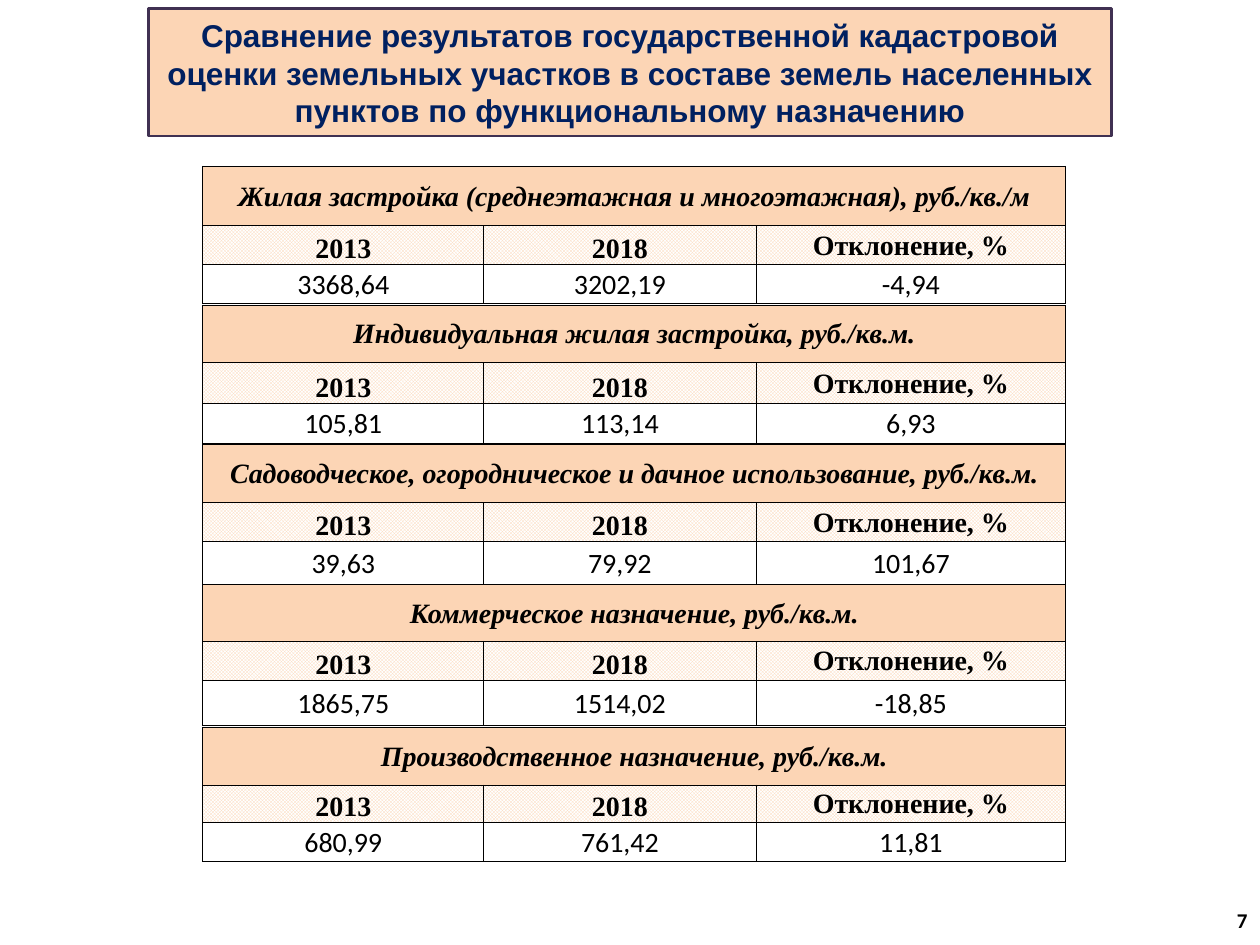
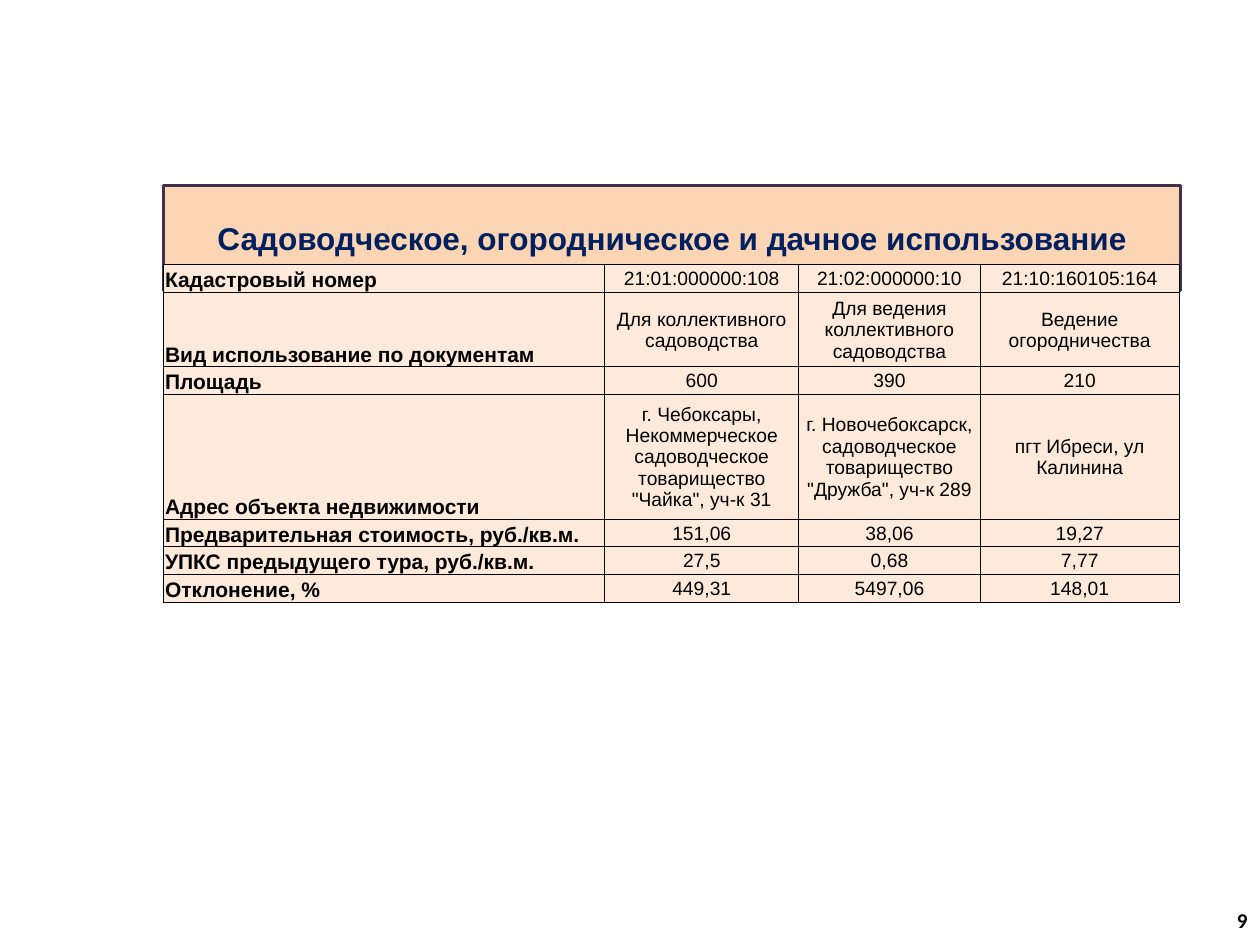
from lxml import etree
from pptx import Presentation
from pptx.dml.color import RGBColor
from pptx.enum.dml import MSO_PATTERN
from pptx.enum.text import MSO_ANCHOR, MSO_AUTO_SIZE, PP_ALIGN
from pptx.oxml.ns import qn
from pptx.util import Inches, Pt

LEFT, CENTER, RIGHT = PP_ALIGN.LEFT, PP_ALIGN.CENTER, PP_ALIGN.RIGHT
MIDDLE, BOTTOM = MSO_ANCHOR.MIDDLE, MSO_ANCHOR.BOTTOM
CHECK = MSO_PATTERN.SMALL_CHECKER_BOARD
GROW = MSO_AUTO_SIZE.SHAPE_TO_FIT_TEXT
TITLE_ONLY = 5

COLORS = {
    "peach": "FCD5B5",
    "cream": "FDEADA",
    "white": "FFFFFF",
    "black": "000000",
    "navy": "002060",
    "plum": "403152",
}

FONTS = {
    "title": {"name": "Arial", "size": Pt(18), "bold": True},
    "number": {"name": "Calibri", "size": Pt(12), "bold": True},
    "group": {"name": "Times New Roman", "size": Pt(16), "bold": True, "italic": True},
    "head": {"name": "Times New Roman", "size": Pt(16), "bold": True, "italic": False},
    "value": {"name": "Calibri", "size": Pt(16), "bold": False},
    "label": {"name": "Arial", "size": Pt(12), "bold": True},
    "detail": {"name": "Arial", "size": Pt(11), "bold": False},
}

INSETS = {
    "margin_left": Inches(0.01),
    "margin_right": Inches(0.01),
    "margin_top": Inches(0.01),
    "margin_bottom": 0,
}

HEADS = ["2013", "2018", "Отклонение, %"]
GROUP_COLS = [2.23, 2.16, 2.46]
GROUPS = [
    (1.32, [0.47, 0.31, 0.31],
     "Жилая застройка (среднеэтажная и многоэтажная), руб./кв./м",
     ["3368,64", "3202,19", "-4,94"]),
    (2.42, [0.46, 0.32, 0.32],
     "Индивидуальная жилая застройка, руб./кв.м.",
     ["105,81", "113,14", "6,93"]),
    (3.53, [0.46, 0.31, 0.34],
     "Садоводческое, огородническое и дачное использование, руб./кв.м.",
     ["39,63", "79,92", "101,67"]),
    (4.64, [0.45, 0.31, 0.36],
     "Коммерческое назначение, руб./кв.м.",
     ["1865,75", "1514,02", "-18,85"]),
    (5.77, [0.46, 0.3, 0.31],
     "Производственное назначение, руб./кв.м.",
     ["680,99", "761,42", "11,81"]),
]

PLOT_COLS = [3.5, 1.54, 1.44, 1.58]
PLOTS = [
    (0.22, ["Кадастровый номер",
            "21:01:000000:108", "21:02:000000:10", "21:10:160105:164"]),
    (0.59, ["Вид использование по документам",
            "Для коллективного садоводства",
            "Для ведения коллективного садоводства",
            "Ведение огородничества"]),
    (0.22, ["Площадь", "600", "390", "210"]),
    (0.99, ["Адрес объекта недвижимости",
            'г. Чебоксары, Некоммерческое садоводческое товарищество "Чайка", уч-к 31',
            'г. Новочебоксарск, садоводческое товарищество "Дружба", уч-к 289',
            "пгт Ибреси, ул Калинина"]),
    (0.22, ["Предварительная стоимость, руб./кв.м.", "151,06", "38,06", "19,27"]),
    (0.22, ["УПКС предыдущего тура, руб./кв.м.", "27,5", "0,68", "7,77"]),
    (0.22, ["Отклонение, %", "449,31", "5497,06", "148,01"]),
]


def color(name):
    return RGBColor.from_string(COLORS[name])


def assign(target, values):
    for key, value in values.items():
        setattr(target, key, value)


def write(frame, text, style, align, tint="black"):
    frame.text = text
    para = frame.paragraphs[0]
    para.alignment = align
    font = para.runs[0].font
    assign(font, FONTS[style])
    font.color.rgb = color(tint)


def add_slide(deck, text, box, number):
    slide = deck.slides.add_slide(deck.slide_layouts[TITLE_ONLY])
    title = slide.shapes.title
    assign(title, dict(zip(("left", "top", "width", "height"), map(Inches, box))))
    title.fill.solid()
    title.fill.fore_color.rgb = color("peach")
    title.line.color.rgb = color("plum")
    title.line.width = Pt(1.5)
    frame = title.text_frame
    write(frame, text, "title", CENTER, "navy")
    assign(frame, {"word_wrap": True, "auto_size": GROW, "vertical_anchor": MIDDLE})

    note = slide.shapes.add_textbox(*map(Inches, (7.67, 7.1, 2.33, 0.4)))
    write(note.text_frame, number, "number", RIGHT)
    assign(note.text_frame, {"word_wrap": True, "vertical_anchor": MIDDLE})
    return slide


def add_grid(slide, left, top, cols, rows):
    frame = slide.shapes.add_table(
        len(rows), len(cols), *map(Inches, (left, top, sum(cols), sum(rows))))
    table = frame.table
    assign(table, {"first_row": False, "horz_banding": False})
    for col, width in zip(table.columns, cols):
        col.width = Inches(width)
    for row, height in zip(table.rows, rows):
        row.height = Inches(height)
    return table


def add_edges(cell):
    props = cell._tc.get_or_add_tcPr()
    for side in ("a:lnL", "a:lnR", "a:lnT", "a:lnB"):
        line = etree.SubElement(props, qn(side), w=str(Pt(0.5)))
        fill = etree.SubElement(line, qn("a:solidFill"))
        etree.SubElement(fill, qn("a:srgbClr"), val=COLORS["black"])


def style_cell(cell, fill, anchor=MIDDLE, check=False):
    add_edges(cell)
    assign(cell, INSETS)
    cell.vertical_anchor = anchor
    if check:
        cell.fill.patterned()
        cell.fill.pattern = CHECK
        cell.fill.back_color.rgb = color("white")
    else:
        cell.fill.solid()
    cell.fill.fore_color.rgb = color(fill)


def add_group(slide, top, rows, name, values):
    table = add_grid(slide, 1.61, top, GROUP_COLS, rows)
    for col, (head, value) in enumerate(zip(HEADS, values)):
        band, label, figure = (table.cell(row, col) for row in range(3))
        style_cell(band, "peach")
        style_cell(label, "peach", MIDDLE if col == 2 else BOTTOM, check=True)
        style_cell(figure, "white")
        write(label.text_frame, head, "head", CENTER)
        write(figure.text_frame, value, "value", CENTER)
    table.cell(0, 0).merge(table.cell(0, 2))
    write(table.cell(0, 0).text_frame, name, "group", CENTER)


def add_plots(slide):
    table = add_grid(slide, 1.3, 2.1, PLOT_COLS, [height for height, _ in PLOTS])
    for row, (_, texts) in enumerate(PLOTS):
        for col, text in enumerate(texts):
            cell = table.cell(row, col)
            anchor, style, align = (
                (MIDDLE, "detail", CENTER) if col else (BOTTOM, "label", LEFT))
            style_cell(cell, "cream", anchor)
            write(cell.text_frame, text, style, align)


def main():
    deck = Presentation()
    deck.slide_width, deck.slide_height = Inches(10), Inches(7.5)

    slide = add_slide(
        deck,
        "Сравнение результатов государственной кадастровой оценки земельных "
        "участков в составе земель населенных пунктов по функциональному назначению",
        (1.18, 0.07, 7.64, 1.01), "7")
    for group in GROUPS:
        add_group(slide, *group)

    slide = add_slide(
        deck, "Садоводческое, огородническое и дачное использование",
        (1.3, 1.69, 8.07, 0.4), "9")
    add_plots(slide)

    deck.save("out.pptx")


if __name__ == "__main__":
    main()
